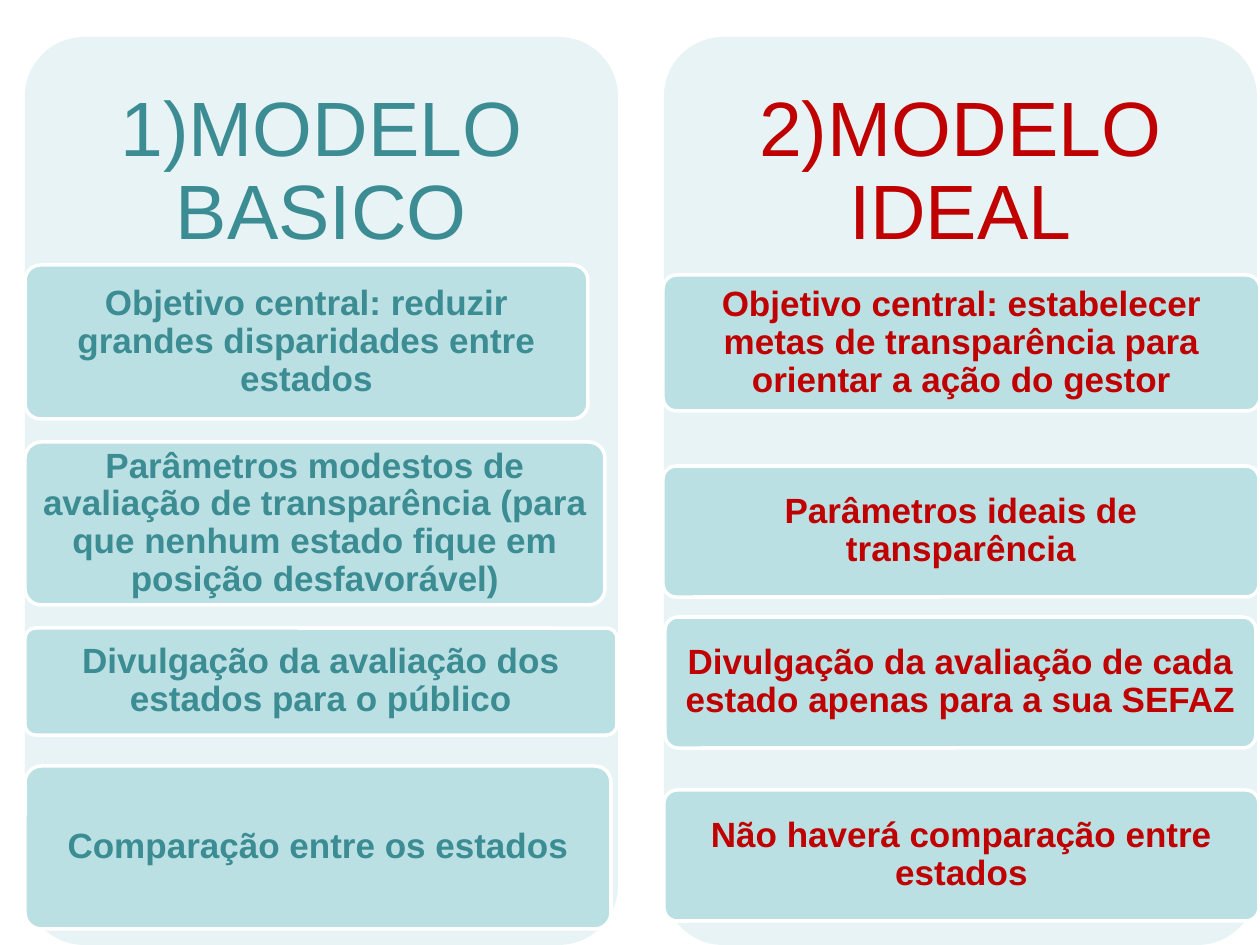
import pptx
import pptx.util
import pptx.dml.color
import pptx.enum.shapes
import pptx.enum.text

SCALE = 914400 / 126
THEME = {
    "font": "Arial", "head": 44, "body": 20,
    "card": "E7F3F4", "item": "BBE0E3", "edge": "FFFFFF",
    "teal": "3C8C93", "red": "C00000",
}
TOP, WIDE, HIGH, HEAD = 37, 593, 908, 272

# Each column: left, colour, title, then items as (box, text)
COLS = [
    (25, "teal", "1)MODELO BASICO", [
        ((25, 265, 563, 154),
         "Objetivo central: reduzir grandes disparidades entre estados"),
        ((25, 442, 580, 163),
         "Parâmetros modestos de avaliação de transparência "
         "(para que nenhum estado fique em posição desfavorável)"),
        ((25, 628, 592, 107),
         "Divulgação da avaliação dos estados para o público"),
        ((25, 766, 586, 163), "Comparação entre os estados"),
    ]),
    (664, "red", "2)MODELO IDEAL", [
        ((663, 275, 597, 136),
         "Objetivo central: estabelecer metas de transparência "
         "para orientar a ação do gestor"),
        ((663, 466, 596, 131), "Parâmetros ideais de transparência"),
        ((665, 617, 591, 131),
         "Divulgação da avaliação de cada estado apenas para a sua SEFAZ"),
        ((664, 790, 595, 131), "Não haverá comparação entre estados"),
    ]),
]


def panel(box, fill):
    """Add a rounded box without shadow or outline."""
    shape = slide.shapes.add_shape(
        pptx.enum.shapes.MSO_SHAPE.ROUNDED_RECTANGLE,
        *[round(n * SCALE) for n in box])
    shape.adjustments[0] = 0.1
    shape.shadow.inherit = False
    shape.fill.solid()
    shape.fill.fore_color.rgb = pptx.dml.color.RGBColor.from_string(THEME[fill])
    shape.line.fill.background()
    return shape


def write(shape, text, size, tone, pad, bold):
    """Put one centred paragraph in a shape; pad is (side, end) in px."""
    frame = shape.text_frame
    frame.word_wrap = True
    frame.vertical_anchor = pptx.enum.text.MSO_ANCHOR.MIDDLE
    frame.margin_left = frame.margin_right = round(pad[0] * SCALE)
    frame.margin_top = frame.margin_bottom = round(pad[1] * SCALE)
    para = frame.paragraphs[0]
    para.text = text
    para.alignment = pptx.enum.text.PP_ALIGN.CENTER
    para.line_spacing = 0.9
    para.font.name = THEME["font"]
    para.font.size = pptx.util.Pt(THEME[size])
    para.font.bold = bold
    para.font.color.rgb = pptx.dml.color.RGBColor.from_string(THEME[tone])


deck = pptx.Presentation()
deck.slide_width = round(1260 * SCALE)
deck.slide_height = round(945 * SCALE)
slide = deck.slides.add_slide(deck.slide_layouts[6])

for left, tone, title, items in COLS:
    panel((left, TOP, WIDE, HIGH), "card")
    head = slide.shapes.add_textbox(
        *[round(n * SCALE) for n in (left, TOP, WIDE, HEAD)])
    write(head, title, "head", tone, (23, 23), False)
    for box, text in items:
        item = panel(box, "item")
        item.line.color.rgb = pptx.dml.color.RGBColor.from_string(THEME["edge"])
        item.line.width = pptx.util.Pt(2)
        write(item, text, "body", tone, (8, 5), True)

deck.save("out.pptx")
